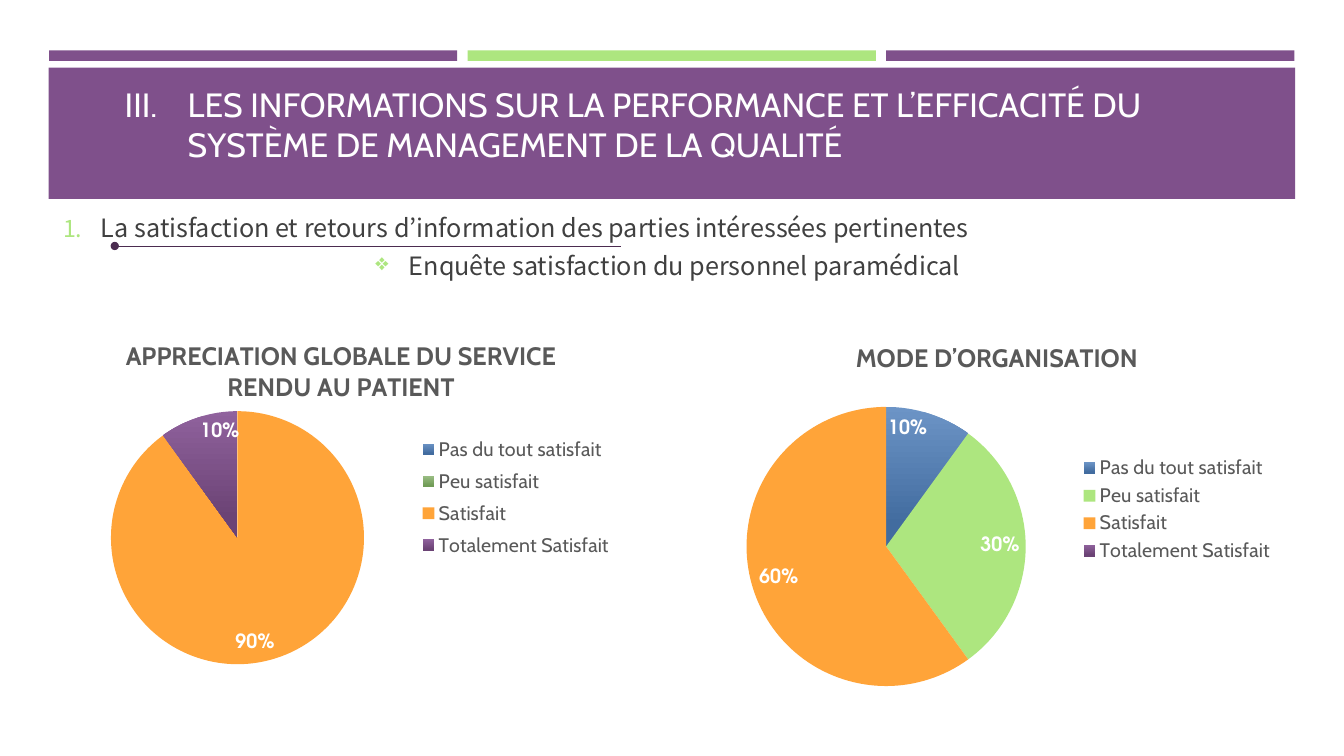
from dataclasses import dataclass

from lxml.etree import SubElement
from pptx import Presentation
from pptx.chart.data import CategoryChartData
from pptx.dml.color import RGBColor
from pptx.enum.chart import XL_CHART_TYPE, XL_LABEL_POSITION, XL_LEGEND_POSITION
from pptx.enum.shapes import MSO_CONNECTOR, MSO_SHAPE
from pptx.enum.text import MSO_ANCHOR, PP_ALIGN
from pptx.oxml import parse_xml
from pptx.oxml.ns import nsdecls, qn
from pptx.util import Pt


@dataclass(frozen=True)
class Theme:
    purple: str = "7F508B"
    green: str = "ADE67F"
    orange: str = "FFA439"
    rule: str = "4B2C50"
    white: str = "FFFFFF"
    body: str = "404040"
    grey: str = "595959"
    blue_fade: tuple = ("6C94C6", "426C9F")
    green_fade: tuple = ("9CBF86", "719C57")
    purple_fade: tuple = ("90629D", "6B4375")
    heading_font: str = "Cabin"
    body_font: str = "Noto Sans CJK KR"
    label_font: str = "TeX Gyre Adventor"
    heading_size: int = 24
    body_size: int = 18
    chart_size: int = 14


CATEGORIES = ("Pas du tout satisfait", "Peu satisfait", "Satisfait", "Totalement Satisfait")


class SlideBuilder:
    def __init__(self, slide, theme):
        self.slide = slide
        self.theme = theme

    def style(self, font, name, size, color, bold=False):
        for attribute, value in {"name": name, "size": Pt(size), "bold": bold}.items():
            setattr(font, attribute, value)
        font.color.rgb = RGBColor.from_string(color)

    def bar(self, left, top, width, height, color):
        shape = self.slide.shapes.add_shape(
            MSO_SHAPE.RECTANGLE, Pt(left), Pt(top), Pt(width), Pt(height))
        shape.shadow.inherit = False
        shape.fill.solid()
        shape.fill.fore_color.rgb = RGBColor.from_string(color)
        shape.line.fill.background()

    def text_box(self, left, top, width, height, anchor):
        frame = self.slide.shapes.add_textbox(Pt(left), Pt(top), Pt(width), Pt(height)).text_frame
        frame.word_wrap = True
        frame.vertical_anchor = anchor
        return frame

    def bullet(self, paragraph, text, font, indent, marker, color=None, percent=100):
        """Fill a paragraph with a hanging bullet; marker is a tag and its attributes."""
        properties = paragraph._p.get_or_add_pPr()
        properties.set("marL", str(Pt(indent)))
        properties.set("indent", str(-Pt(indent)))
        if color:
            SubElement(SubElement(properties, qn("a:buClr")), qn("a:srgbClr"), val=color)
        SubElement(properties, qn("a:buSzPct"), val=str(percent * 1000))
        tag, attributes = marker
        SubElement(properties, qn(tag), **attributes)
        run = paragraph.add_run()
        run.text = text
        self.style(run.font, *font)

    def dotted_rule(self, left, right, top):
        connector = self.slide.shapes.add_connector(
            MSO_CONNECTOR.STRAIGHT, Pt(left), Pt(top), Pt(right), Pt(top))
        connector.line.color.rgb = RGBColor.from_string(self.theme.rule)
        connector.line.width = Pt(0.25)
        SubElement(connector.line._get_or_add_ln(), qn("a:headEnd"), type="oval")
        SubElement(connector._element.spPr, qn("a:effectLst"))

    def place(self, element, index, x, y, width=None, height=None, inner=False):
        """Set a manual layout, in fractions of the chart, as the child at index."""
        for layout in element.findall(qn("c:layout")):
            element.remove(layout)
        layout = parse_xml(f"<c:layout {nsdecls('c')}><c:manualLayout/></c:layout>")
        manual = layout[0]
        if inner:
            SubElement(manual, qn("c:layoutTarget"), val="inner")
        for tag in ("xMode", "yMode"):
            SubElement(manual, qn(f"c:{tag}"), val="edge")
        for tag, value in {"x": x, "y": y, "w": width, "h": height}.items():
            if value is not None:
                SubElement(manual, qn(f"c:{tag}"), val=str(value))
        element.insert(index, layout)

    def paint(self, fill, color):
        if isinstance(color, str):
            fill.solid()
            fill.fore_color.rgb = RGBColor.from_string(color)
            return
        fill.gradient()
        fill.gradient_angle = 270
        for stop, position, shade in zip(fill.gradient_stops, (0, 0.84), color):
            stop.position = position
            stop.color.rgb = RGBColor.from_string(shade)

    def pie(self, bounds, title, values, colors, title_at, plot_at, legend_at):
        theme = self.theme
        data = CategoryChartData(number_format="0%")
        data.categories = CATEGORIES
        data.add_series("Series 1", values)
        chart = self.slide.shapes.add_chart(
            XL_CHART_TYPE.PIE, *(Pt(length) for length in bounds), data).chart
        chart.font.name = theme.heading_font
        chart.font.size = Pt(10)

        chart.has_title = True
        run = chart.chart_title.text_frame.paragraphs[0].add_run()
        run.text = title
        self.style(run.font, theme.heading_font, theme.body_size, theme.grey, True)
        self.place(chart.chart_title._element, 1, *title_at)

        chart.has_legend = True
        chart.legend.position = XL_LEGEND_POSITION.RIGHT
        chart.legend.include_in_layout = False
        self.style(chart.legend.font, theme.heading_font, theme.chart_size, theme.grey)
        self.place(chart.legend._element, 1, *legend_at)
        self.place(chart._chartSpace.chart.plotArea, 0, *plot_at, inner=True)

        plot = chart.plots[0]
        plot.vary_by_categories = True
        series = plot.series[0]
        for index, color in enumerate(colors):
            self.paint(series.points[index].format.fill, color)
        self.percent_labels(series.data_labels, values)

    def percent_labels(self, labels, values):
        settings = {"show_value": True, "number_format": "0%", "number_format_is_linked": False,
                    "position": XL_LABEL_POSITION.INSIDE_END}
        for attribute, value in settings.items():
            setattr(labels, attribute, value)
        theme = self.theme
        self.style(labels.font, theme.label_font, theme.chart_size, theme.white, True)
        empty = [index for index, value in enumerate(values) if value == 0]
        for order, index in enumerate(empty):
            labels._element.insert(order, parse_xml(
                f'<c:dLbl {nsdecls("c")}><c:idx val="{index}"/><c:delete val="1"/></c:dLbl>'))


def main():
    theme = Theme()
    presentation = Presentation()
    presentation.slide_width, presentation.slide_height = Pt(960), Pt(540)
    builder = SlideBuilder(presentation.slides.add_slide(presentation.slide_layouts[6]), theme)

    for column, color in enumerate((theme.purple, theme.green, theme.purple)):
        builder.bar(35 + 299 * column, 36, 291.6, 7.5, color)
    builder.bar(34.8, 48.3, 890.3, 93.8, theme.purple)

    heading = builder.text_box(82, 15, 834, 106, MSO_ANCHOR.BOTTOM)
    builder.bullet(
        heading.paragraphs[0],
        "LES INFORMATIONS SUR LA PERFORMANCE ET L’EFFICACITÉ DU SYSTÈME DE MANAGEMENT DE LA QUALITÉ",
        (theme.heading_font, theme.heading_size, theme.white), 45,
        ("a:buAutoNum", {"type": "romanUcPeriod", "startAt": "3"}))

    body = builder.text_box(38, 129, 878, 94, MSO_ANCHOR.MIDDLE)
    body_font = (theme.body_font, theme.body_size, theme.body)
    builder.bullet(
        body.paragraphs[0],
        "La satisfaction et retours d’information des parties intéressées pertinentes",
        body_font, 27, ("a:buAutoNum", {"type": "arabicPeriod"}), theme.green, 92)
    survey = body.add_paragraph()
    survey.alignment = PP_ALIGN.CENTER
    survey.space_before = Pt(5)
    builder.bullet(survey, "Enquête satisfaction du personnel paramédical",
                   body_font, 24, ("a:buChar", {"char": "❖"}), theme.green, 92)
    builder.dotted_rule(82, 443.5, 175.7)

    builder.pie(
        (38, 223, 405, 262), "APPRECIATION GLOBALE DU SERVICE RENDU AU PATIENT",
        (0, 0, 0.9, 0.1), (theme.blue_fade, theme.green_fade, theme.orange, theme.purple_fade),
        (0.12, 0.06), (0.1, 0.27, 0.45, 0.69), (0.65, 0.32, 0.34, 0.37))
    builder.pie(
        (500, 223, 415.5, 279), "MODE D’ORGANISATION",
        (0.1, 0.3, 0.6, 0), (theme.blue_fade, theme.green, theme.orange, theme.purple_fade),
        (0.26, 0.06), (0.08, 0.24, 0.48, 0.72), (0.65, 0.36, 0.34, 0.29))

    presentation.save("out.pptx")


if __name__ == "__main__":
    main()
